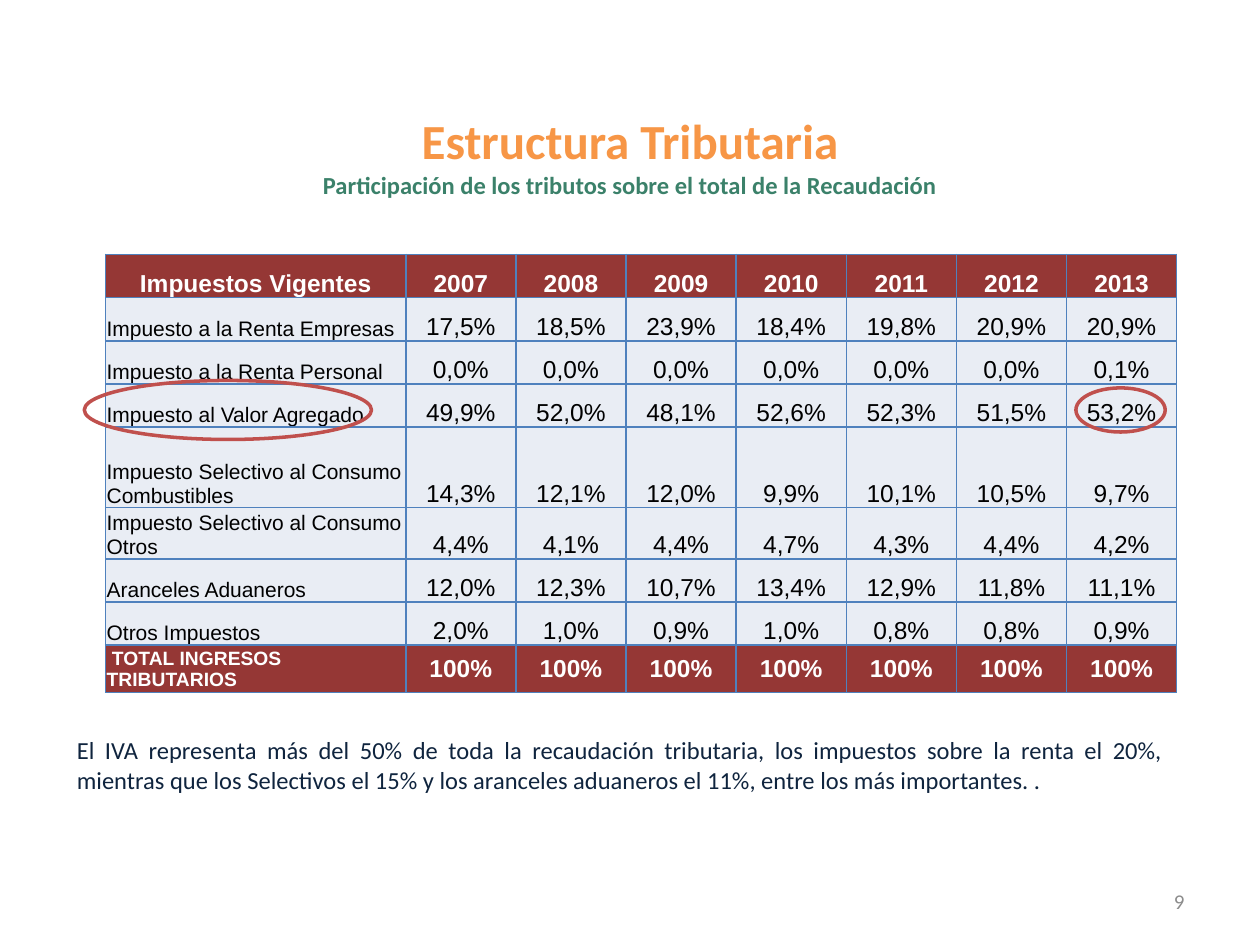
"""Build the slide on the tax structure and each tax's share of revenue."""
from lxml.etree import SubElement
from pptx import Presentation
from pptx.dml.color import RGBColor
from pptx.enum.shapes import MSO_SHAPE
from pptx.enum.text import MSO_ANCHOR, PP_ALIGN
from pptx.oxml.ns import qn
from pptx.util import Cm, Pt

TITLE = "Estructura Tributaria"
SUBTITLE = "Participación de los tributos sobre el total de la Recaudación"
NOTE = ("El IVA representa más del 50% de toda la recaudación tributaria, los impuestos "
        "sobre la renta el 20%, mientras que los Selectivos el 15% y los aranceles "
        "aduaneros el 11%, entre los más importantes. .")
PAGE = "9"
HEADER = ["Impuestos Vigentes", "2007", "2008", "2009", "2010", "2011", "2012", "2013"]
TAXES = [
    ["Impuesto a la Renta Empresas", "17,5%", "18,5%", "23,9%", "18,4%", "19,8%", "20,9%", "20,9%"],
    ["Impuesto a la Renta Personal", "0,0%", "0,0%", "0,0%", "0,0%", "0,0%", "0,0%", "0,1%"],
    ["Impuesto al Valor Agregado", "49,9%", "52,0%", "48,1%", "52,6%", "52,3%", "51,5%", "53,2%"],
    ["Impuesto Selectivo al Consumo Combustibles",
     "14,3%", "12,1%", "12,0%", "9,9%", "10,1%", "10,5%", "9,7%"],
    ["Impuesto Selectivo al Consumo Otros",
     "4,4%", "4,1%", "4,4%", "4,7%", "4,3%", "4,4%", "4,2%"],
    ["Aranceles Aduaneros", "12,0%", "12,3%", "10,7%", "13,4%", "12,9%", "11,8%", "11,1%"],
    ["Otros Impuestos", "2,0%", "1,0%", "0,9%", "1,0%", "0,8%", "0,8%", "0,9%"],
]
TOTAL = [" TOTAL INGRESOS TRIBUTARIOS"] + ["100%"] * 7
ROWS = [HEADER, *TAXES, TOTAL]

TABLE_LEFT, TABLE_TOP = 2.13, 5.13
LABEL_W, YEAR_W = 6.05, 2.22
ROW_H, TALL_H, TALL_ROW = 0.87, 1.62, 4
RINGS = [(1.7, 7.67, 5.79, 1.19), (21.69, 7.82, 1.8, 0.89)]

THEME = {
    "text_font": "Calibri", "table_font": "Arial",
    "title": "F79646", "subtitle": "3B816A", "note": "0F243E", "page": "8C8C8C",
    "band": "953735", "band_text": "FFFFFF", "cell": "E9EDF4", "cell_text": "000000",
    "border": "4F81BD", "ring": "C0504D",
    "title_size": 28, "body_size": 14, "label_size": 12, "total_size": 11, "page_size": 12,
}


def style(r, size, color, bold=False, font="text_font"):
    r.font.size, r.font.bold = Pt(THEME[size]), bold
    r.font.name = THEME[font]
    r.font.color.rgb = RGBColor.from_string(THEME[color])


def add_text(s, box, text, align, anchor, styles):
    tf = s.shapes.add_textbox(*map(Cm, box)).text_frame
    tf.word_wrap, tf.vertical_anchor = True, anchor
    p = tf.paragraphs[0]
    p.text, p.alignment = text, align
    for r, args in zip(p.runs, styles):
        style(r, *args)


def add_borders(cell):
    tcPr = cell._tc.get_or_add_tcPr()
    for i, side in enumerate(("lnL", "lnR", "lnT", "lnB")):
        ln = tcPr.makeelement(qn(f"a:{side}"), {"w": str(Pt(1))})
        fill = SubElement(ln, qn("a:solidFill"))
        SubElement(fill, qn("a:srgbClr"), val=THEME["border"])
        tcPr.insert(i, ln)


def fill_cell(cell, text, row, col):
    total = row == len(ROWS) - 1
    band = row == 0 or total
    cell.margin_left = cell.margin_right = cell.margin_top = Cm(0.02)
    cell.margin_bottom = 0
    cell.vertical_anchor = MSO_ANCHOR.MIDDLE if total else MSO_ANCHOR.BOTTOM
    cell.fill.solid()
    cell.fill.fore_color.rgb = RGBColor.from_string(THEME["band" if band else "cell"])
    p = cell.text_frame.paragraphs[0]
    p.text = text
    label = col == 0 and row > 0
    p.alignment = PP_ALIGN.LEFT if label else PP_ALIGN.CENTER
    size = ("total_size" if total else "label_size") if label else "body_size"
    style(p.runs[0], size, "band_text" if band else "cell_text", band, "table_font")
    add_borders(cell)


def add_tax_table(s):
    widths = [LABEL_W] + [YEAR_W] * (len(HEADER) - 1)
    heights = [TALL_H if i == TALL_ROW else ROW_H for i in range(len(ROWS))]
    box = TABLE_LEFT, TABLE_TOP, sum(widths), sum(heights)
    table = s.shapes.add_table(len(ROWS), len(HEADER), *map(Cm, box)).table
    for column, width in zip(table.columns, widths):
        column.width = Cm(width)
    for i, (values, height) in enumerate(zip(ROWS, heights)):
        table.rows[i].height = Cm(height)
        for j, text in enumerate(values):
            fill_cell(table.cell(i, j), text, i, j)


def add_ring(s, box):
    sp = s.shapes.add_shape(MSO_SHAPE.OVAL, *map(Cm, box))
    sp.shadow.inherit = False
    sp.fill.background()
    sp.line.color.rgb = RGBColor.from_string(THEME["ring"])
    sp.line.width = Pt(2)


def main():
    prs = Presentation()
    prs.slide_width, prs.slide_height = Cm(25.4), Cm(19.05)
    s = prs.slides.add_slide(prs.slide_layouts[6])
    add_text(s, (18.2, 17.66, 5.93, 1.01), PAGE, PP_ALIGN.RIGHT, MSO_ANCHOR.MIDDLE,
             [("page_size", "page")])
    add_text(s, (0, 2.31, 25.4, 1.63), f"{TITLE}\v{SUBTITLE}", PP_ALIGN.CENTER,
             MSO_ANCHOR.MIDDLE,
             [("title_size", "title", True), ("body_size", "subtitle", True)])
    add_text(s, (1.3, 14.7, 22.4, 1.45), NOTE, PP_ALIGN.JUSTIFY, MSO_ANCHOR.TOP,
             [("body_size", "note")])
    add_tax_table(s)
    for box in RINGS:
        add_ring(s, box)
    prs.save("out.pptx")


if __name__ == "__main__":
    main()
